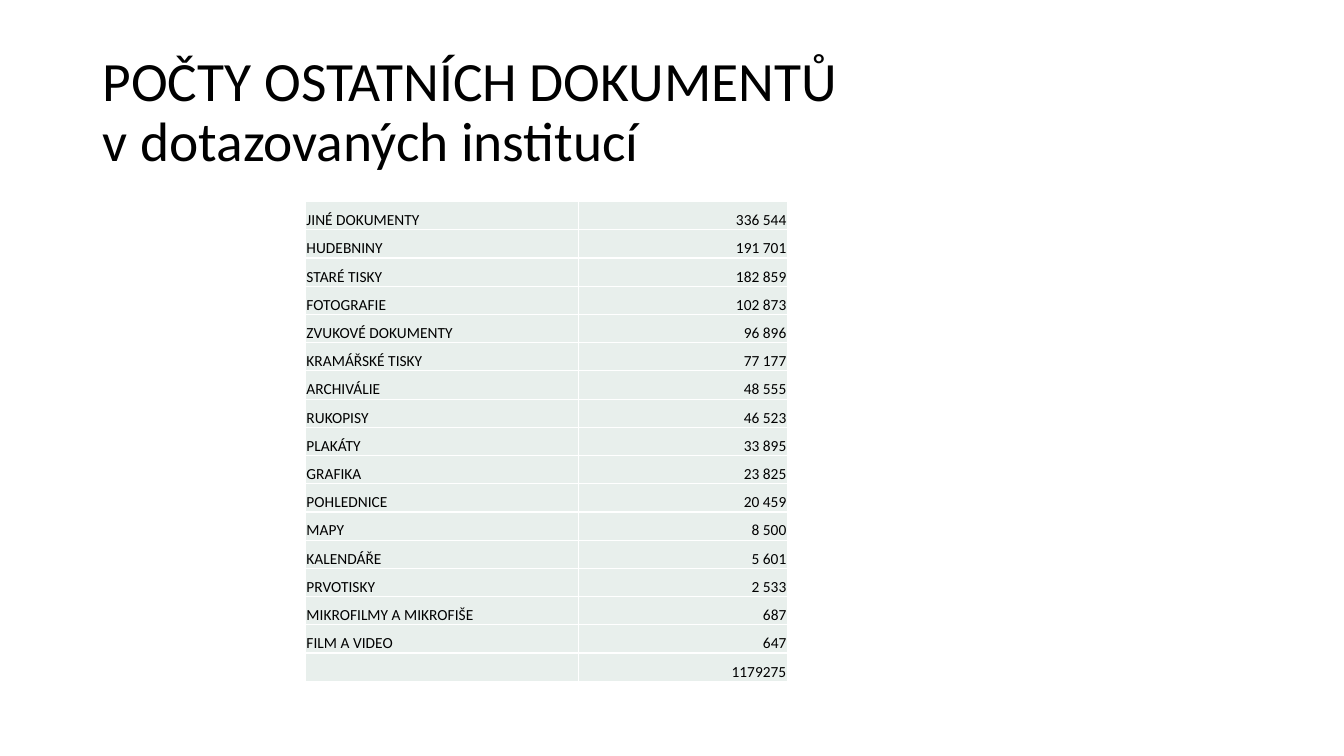
from lxml import etree
from pptx import Presentation
from pptx.dml.color import RGBColor
from pptx.enum.text import MSO_ANCHOR, PP_ALIGN
from pptx.oxml.ns import qn
from pptx.util import Inches, Pt

MIDDLE, BOTTOM = MSO_ANCHOR.MIDDLE, MSO_ANCHOR.BOTTOM
LEFT, RIGHT = PP_ALIGN.LEFT, PP_ALIGN.RIGHT
FONT = "Calibri"
COLORS = {"text": "000000", "cell": "E8EFEC", "line": "FFFFFF"}
TITLE = ["POČTY OSTATNÍCH DOKUMENTŮ", "v dotazovaných institucí"]
COUNTS = [
    ("JINÉ DOKUMENTY", "336 544"),
    ("HUDEBNINY", "191 701"),
    ("STARÉ TISKY", "182 859"),
    ("FOTOGRAFIE", "102 873"),
    ("ZVUKOVÉ DOKUMENTY", "96 896"),
    ("KRAMÁŘSKÉ TISKY", "77 177"),
    ("ARCHIVÁLIE", "48 555"),
    ("RUKOPISY", "46 523"),
    ("PLAKÁTY", "33 895"),
    ("GRAFIKA", "23 825"),
    ("POHLEDNICE", "20 459"),
    ("MAPY", "8 500"),
    ("KALENDÁŘE", "5 601"),
    ("PRVOTISKY", "2 533"),
    ("MIKROFILMY A MIKROFIŠE", "687"),
    ("FILM A VIDEO", "647"),
    ("", "1179275"),
]


def set_font(para, size):
    """Give a paragraph the slide's font at a size in points."""
    para.font.name = FONT
    para.font.size = Pt(size)
    para.font.color.rgb = RGBColor.from_string(COLORS["text"])


def add_title(slide, left, top, width, height):
    """Place the two-line title in the given box."""
    box = slide.shapes.add_textbox(
        Inches(left), Inches(top), Inches(width), Inches(height))
    frame = box.text_frame
    frame.word_wrap = True
    frame.vertical_anchor = MIDDLE
    frame.text = "\v".join(TITLE)
    para = frame.paragraphs[0]
    para.line_spacing = 0.9
    set_font(para, 39.6)


def add_lines(cell):
    """Draw thin lines on all four sides of a cell."""
    props = cell._tc.get_or_add_tcPr()
    for spot, side in enumerate(("a:lnL", "a:lnR", "a:lnT", "a:lnB")):
        line = etree.Element(qn(side), w=str(Pt(1)))
        fill = etree.SubElement(line, qn("a:solidFill"))
        etree.SubElement(fill, qn("a:srgbClr"), val=COLORS["line"])
        props.insert(spot, line)


def fill_cell(cell, text, align):
    """Write and style one table cell."""
    cell.fill.solid()
    cell.fill.fore_color.rgb = RGBColor.from_string(COLORS["cell"])
    cell.margin_left = cell.margin_right = cell.margin_top = Inches(0.01)
    cell.margin_bottom = 0
    cell.vertical_anchor = BOTTOM
    cell.text = text
    para = cell.text_frame.paragraphs[0]
    para.alignment = align
    set_font(para, 11)
    add_lines(cell)


def add_counts(slide, left, top, width, height):
    """Place the table of document counts in the given box."""
    table = slide.shapes.add_table(
        len(COUNTS), 2, Inches(left), Inches(top),
        Inches(width), Inches(height)).table
    table.first_row = table.horz_banding = False
    table.columns[0].width = Inches(2.71)
    table.columns[1].width = Inches(width - 2.71)
    for row, pair in enumerate(COUNTS):
        table.rows[row].height = Inches(height / len(COUNTS))
        for col, align in enumerate((LEFT, RIGHT)):
            fill_cell(table.cell(row, col), pair[col], align)


def main():
    """Build and save the slide."""
    deck = Presentation()
    deck.slide_width, deck.slide_height = Inches(13.33), Inches(7.5)
    slide = deck.slides.add_slide(deck.slide_layouts[6])
    add_title(slide, 0.92, 0.4, 11.5, 1.45)
    add_counts(slide, 3.03, 2, 4.78, 4.76)
    deck.save("out.pptx")


if __name__ == "__main__":
    main()
